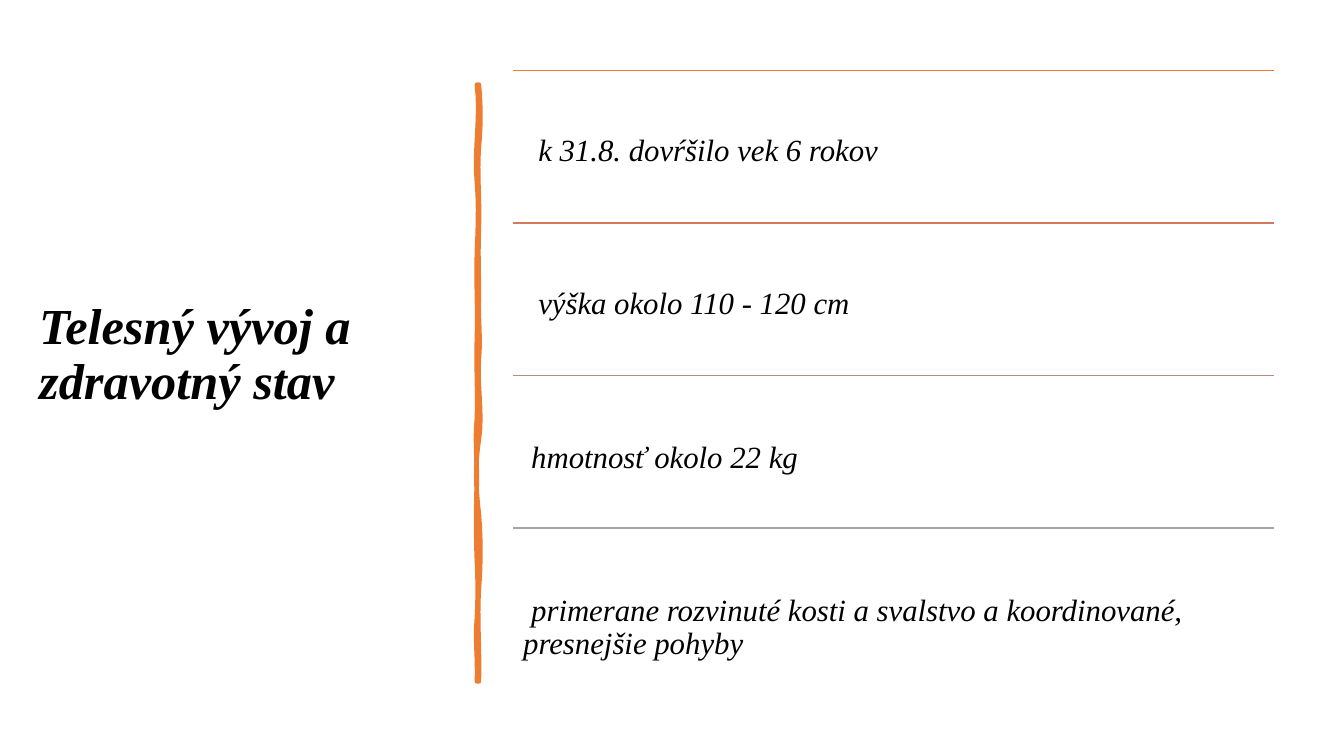
from pptx import Presentation
from pptx import util as u
from pptx.dml.color import RGBColor
from pptx.enum import shapes, text
from pptx.oxml.ns import qn
from lxml import etree

Inches = u.Inches
ORANGE = "ED7D31"


def rgb(color):
    return RGBColor.from_string(color)


def add_text(left, top, width, height, inset, pad, words, size, anchor, bold=False, indent=0):
    sp = s.shapes.add_textbox(Inches(left), Inches(top), Inches(width), Inches(height))
    tf = sp.text_frame
    tf.word_wrap = True
    tf.vertical_anchor = anchor
    tf.margin_left = tf.margin_right = Inches(inset)
    tf.margin_top, tf.margin_bottom = Inches(pad), Inches(0.05)
    p = tf.paragraphs[0]
    p.line_spacing = 0.9
    p._p.get_or_add_pPr().set("indent", str(Inches(indent)))
    r = p.add_run()
    r.text = words
    r.font.name = "Times New Roman"
    r.font.size = u.Pt(size)
    r.font.bold = bold
    r.font.italic = True
    r.font.color.rgb = rgb("000000")


prs = Presentation()
prs.slide_width, prs.slide_height = Inches(13.33), Inches(7.5)
s = prs.slides.add_slide(prs.slide_layouts[6])

add_text(0.29, 1.18, 4.09, 3.98, 0.1, 0.77, "Telesný vývoj a zdravotný stav", 36,
         text.MSO_ANCHOR.MIDDLE, bold=True)

right_edge = [(1.46, 0.02, 0.02), (2.26, -0.02, 0.01), (2.94, -0.01, 0), (3.56, -0.01, 0.02),
              (4.36, -0.02, 0.04), (5.1, -0.04, -0.03), (5.84, 0.02, 0.02), (6.76, -0.02, 0.01)]
left_edge = [(6.13, 0.01, -0.02), (5.57, 0.01, 0.01), (4.77, -0.01, -0.01), (4.15, 0, -0.02),
             (3.35, 0.01, -0.01), (2.5, 0.01, -0.01), (1.81, 0.01, 0.02), (0.84, -0.03, 0.04)]
outline = []
for x, y, edge in ((4.75, 0.84, right_edge), (4.73, 6.76, left_edge)):
    outline.append((x, y))
    for end, bulge1, bulge2 in edge:
        for step in range(1, 9):
            t = step / 8
            wave = 3 * t * (1 - t) * ((1 - t) * bulge1 + t * bulge2)
            outline.append((x + wave, y + (end - y) * t))
        y = end

fb = s.shapes.build_freeform(Inches(outline[0][0]), Inches(outline[0][1]))
fb.add_line_segments([(Inches(x), Inches(y)) for x, y in outline[1:]], close=True)
bar = fb.convert_to_shape()
bar.shadow.inherit = False
bar.fill.solid()
bar.fill.fore_color.rgb = rgb(ORANGE)
bar.line.color.rgb = rgb(ORANGE)
bar.line.width = u.Pt(3.25)
etree.SubElement(bar.line._get_or_add_ln(), qn("a:round"))

rows = [
    ("k 31.8. dovŕšilo vek 6 rokov", ORANGE, 0.15, 0.64),
    ("výška okolo 110 - 120 cm", "D17B5C", 0.15, 0.64),
    ("hmotnosť okolo 22 kg", "B98A82", 0.08, 0.66),
    ("primerane rozvinuté kosti a svalstvo a koordinované, presnejšie pohyby", "A5A5A5", 0.08, 0.66),
]
for i, (words, color, indent, pad) in enumerate(rows):
    top = 0.7 + i * 1.513
    rule = s.shapes.add_connector(shapes.MSO_CONNECTOR.STRAIGHT, Inches(5.09), Inches(top),
                                  Inches(12.64), Inches(top))
    rule.line.color.rgb = rgb(color)
    rule.line.width = u.Pt(1)
    etree.SubElement(rule._element.spPr, qn("a:effectLst"))
    add_text(5.09, top, 7.55, 1.51, 0.1, pad, words, 22, text.MSO_ANCHOR.TOP, indent=indent)

prs.save("out.pptx")
